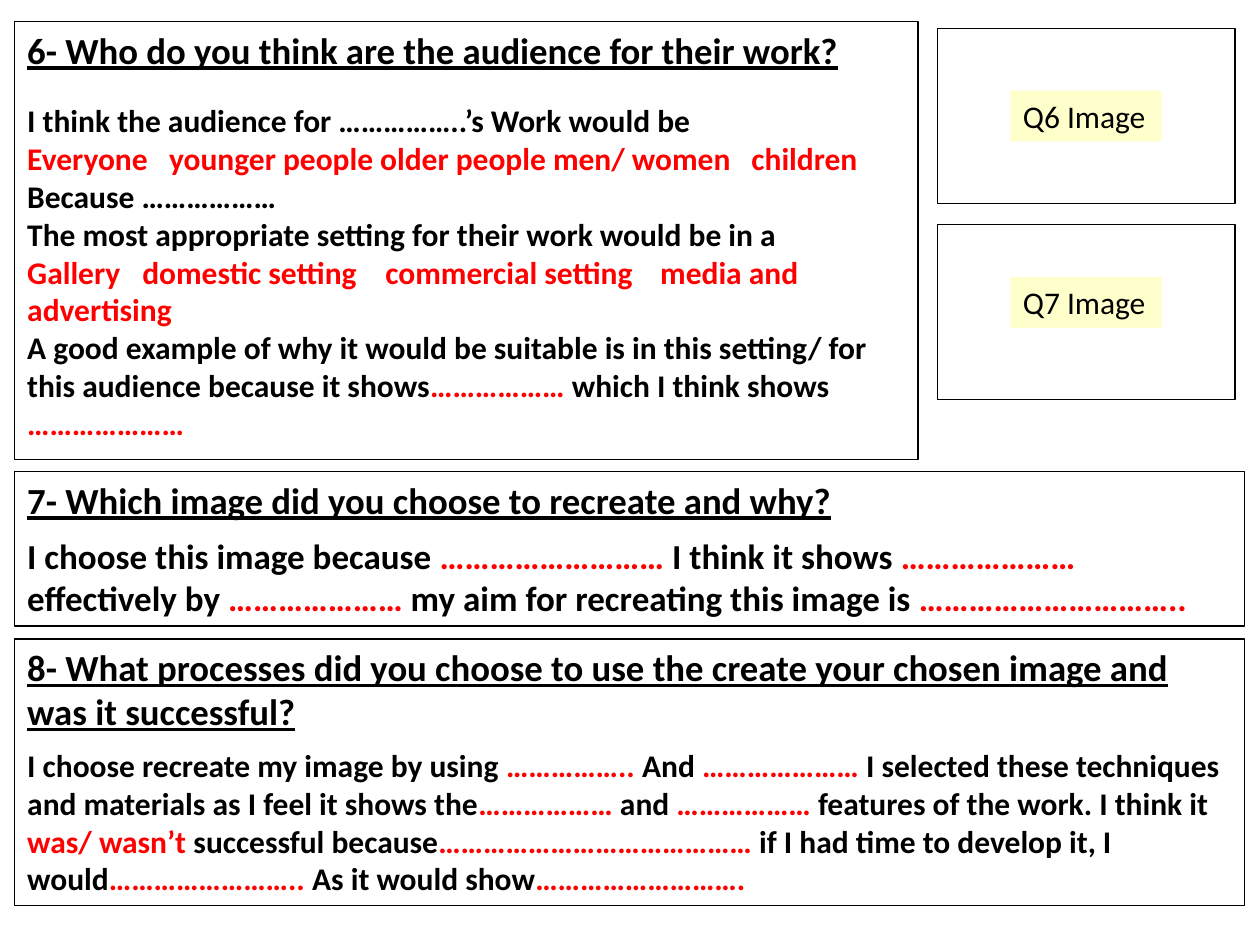
"""Build a worksheet slide with three question boxes and two image frames."""
from itertools import cycle

from lxml.etree import SubElement
from pptx import Presentation
from pptx.dml.color import RGBColor
from pptx.enum.shapes import MSO_SHAPE
from pptx.enum.text import MSO_ANCHOR, MSO_AUTO_SIZE, PP_ALIGN
from pptx.oxml.ns import qn
from pptx.util import Cm, Pt

BLACK = RGBColor(0, 0, 0)
RED = RGBColor(0xFF, 0, 0)
WHITE = RGBColor(0xFF, 0xFF, 0xFF)
CREAM = RGBColor(0xFF, 0xFF, 0xCC)
FONT = "Calibri"
MARGIN = 0.3
FULL_WIDTH = 24.79

AUDIENCE = [
    (["I think the audience for ……………..’s Work would be"], []),
    (["", "Everyone\tyounger people older people men/ women\tchildren"], [2.86, 14.6]),
    (["Because ………………"], []),
    (["The most appropriate setting for their work would be in a"], []),
    (["", "Gallery\tdomestic setting\tcommercial setting\tmedia and advertising"],
     [2.32, 7.22, 12.76]),
    (["A good example of why it would be suitable is in this setting/ for this "
      "audience because it shows", "………………", " which I think shows ", "…………………"], []),
]
RECREATE = [
    (["I choose this image because", " ……………………… ", "I think it shows ", "…………………",
      " effectively by ", "…………………", " my aim for recreating this image is ",
      "ย".replace("ย", "…………………………..")], []),
]
PROCESSES = [
    (["I choose recreate my image by using ", "……………..", " And ", "…………………",
      " I selected these techniques and materials as I feel it shows the", "………………",
      " and ", "………………", " features of the work. I think it ", "was/ wasn’t ",
      "successful because", "……………………………………",
      " if I had time to develop it, I would", "……………………..",
      " As it would show", "………………………."], []),
]


def add_box(s, left, top, width, height, fill=None, line=None):
    """Add a plain rectangle with sizes in centimetres."""
    sp = s.shapes.add_shape(MSO_SHAPE.RECTANGLE, Cm(left), Cm(top), Cm(width), Cm(height))
    sp.shadow.inherit = False
    if fill is None:
        sp.fill.background()
    else:
        sp.fill.solid()
        sp.fill.fore_color.rgb = fill
    if line is None:
        sp.line.fill.background()
    else:
        sp.line.color.rgb = line
        sp.line.width = Pt(0.75)
    return sp


def start_text(sp):
    """Prepare a shape for top-anchored, wrapped text."""
    tf = sp.text_frame
    tf.word_wrap = True
    tf.auto_size = MSO_AUTO_SIZE.SHAPE_TO_FIT_TEXT
    tf.vertical_anchor = MSO_ANCHOR.TOP
    tf.paragraphs[0].alignment = PP_ALIGN.LEFT
    return tf


def add_run(p, text, size, color=BLACK, bold=False, underline=False):
    """Append one formatted run to a paragraph."""
    r = p.add_run()
    r.text = text
    r.font.name = FONT
    r.font.size = Pt(size)
    r.font.color.rgb = color
    r.font.bold = bold
    r.font.underline = underline


def set_tabs(p, stops):
    """Set left tab stops given in centimetres."""
    tabs = SubElement(p._p.get_or_add_pPr(), qn("a:tabLst"))
    for stop in stops:
        SubElement(tabs, qn("a:tab"), pos=str(int(Cm(stop))), algn="l")


def add_question(s, top, width, height, heading, gap, size, body):
    """Add a question box whose body runs alternate between black and red."""
    tf = start_text(add_box(s, MARGIN, top, width, height, WHITE, BLACK))
    p = tf.paragraphs[0]
    p.space_after = Pt(gap)
    add_run(p, heading, 21, bold=True, underline=True)
    for parts, stops in body:
        p = tf.add_paragraph()
        p.alignment = PP_ALIGN.LEFT
        if stops:
            set_tabs(p, stops)
        for text, color in zip(parts, cycle((BLACK, RED))):
            if text:
                add_run(p, text, size, color, bold=True)


def add_image_frame(s, top, label, label_top):
    """Add an empty frame with a cream label on it."""
    add_box(s, 18.9, top, 6, 3.53, line=BLACK)
    tf = start_text(add_box(s, 20.37, label_top, 3.05, 1.02, CREAM))
    add_run(tf.paragraphs[0], label, 18)


def main():
    """Build and save the slide."""
    prs = Presentation()
    prs.slide_width, prs.slide_height = Cm(25.4), Cm(19.05)
    s = prs.slides.add_slide(prs.slide_layouts[6])
    add_question(s, 0.43, 18.21, 8.84,
                 "6- Who do you think are the audience for their work?", 17, 18, AUDIENCE)
    add_question(s, 9.5, FULL_WIDTH, 3.12,
                 "7- Which image did you choose to recreate and why?", 7.3, 20, RECREATE)
    add_question(s, 12.88, FULL_WIDTH, 5.38,
                 "8- What processes did you choose to use the create your chosen image "
                 "and was it successful?", 7.3, 18, PROCESSES)
    add_image_frame(s, 0.58, "Q6 Image", 1.83)
    add_image_frame(s, 4.52, "Q7 Image", 5.59)
    prs.save("out.pptx")


if __name__ == "__main__":
    main()
